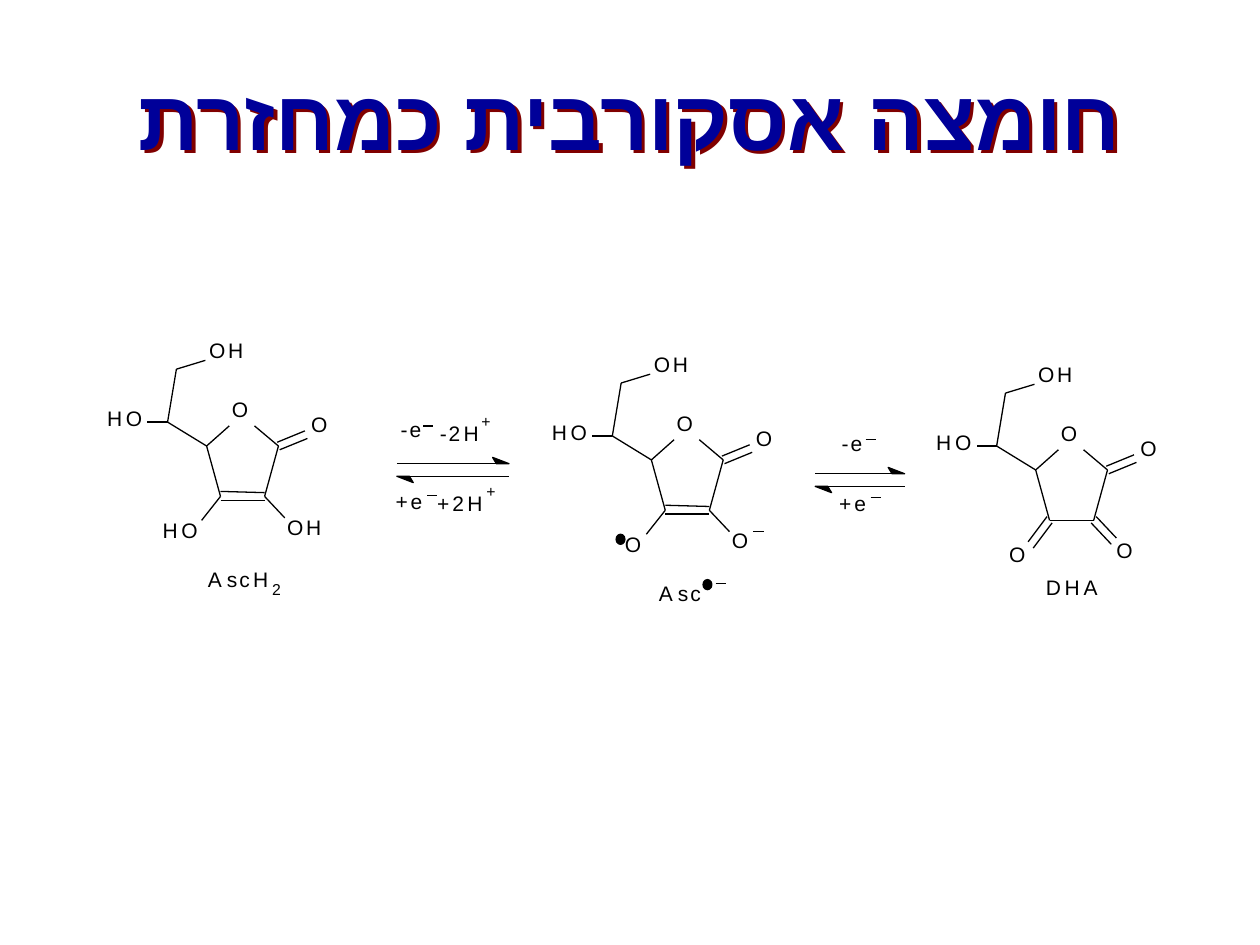
"""Build the slide showing ascorbic acid as a reducing agent."""
from lxml import etree
from pptx import Presentation
from pptx.dml.color import RGBColor as RGB
from pptx.enum.lang import MSO_LANGUAGE_ID as LANG
from pptx.enum.shapes import MSO_CONNECTOR as CONN, MSO_SHAPE as SHAPE
from pptx.enum.text import MSO_ANCHOR as ANCHOR, MSO_AUTO_SIZE as FIT, PP_ALIGN as ALIGN
from pptx.oxml import parse_xml
from pptx.oxml.ns import qn
from pptx.util import Pt

PX = 9144
THEME = {
    "font": "Arial",
    "title": RGB(0x00, 0x00, 0x99),
    "shadow": "800000",
    "ink": RGB(0x00, 0x00, 0x00),
    "title_size": 48,
    "size": 12,
    "script_size": 9,
    "line": 0.75,
}
GLYPHS = {
    "H": (12, 15), "O": (13, 15), "D": (12, 15), "A": (11, 15), "s": (8, 10),
    "c": (8, 11), "e": (9, 12), "2": (9, 12), "+": (10, 12), "-": (5, 7),
}

prs = Presentation()
prs.slide_width, prs.slide_height = 1000 * PX, 750 * PX
s = prs.slides.add_slide(prs.slide_layouts[6])


def add_label(text, x, y, size=THEME["size"]):
    """Set the letters of a chemical label one after another."""
    scale = size / THEME["size"]
    for letter in text:
        width, advance = GLYPHS[letter]
        sp = s.shapes.add_textbox(x * PX, y * PX, round(width * scale) * PX, round(20 * scale) * PX)
        tf = sp.text_frame
        tf.margin_left = tf.margin_right = tf.margin_top = tf.margin_bottom = 0
        tf.word_wrap = False
        tf.auto_size = FIT.SHAPE_TO_FIT_TEXT
        tf.text = letter
        font = tf.paragraphs[0].runs[0].font
        font.name, font.size = THEME["font"], Pt(size)
        font.color.rgb = THEME["ink"]
        x += advance


def add_line(x1, y1, x2, y2):
    """Draw one thin stroke."""
    sp = s.shapes.add_connector(CONN.STRAIGHT, x1 * PX, y1 * PX, x2 * PX, y2 * PX)
    sp.line.color.rgb = THEME["ink"]
    sp.line.width = Pt(THEME["line"])
    etree.SubElement(sp._element.spPr, qn("a:effectLst"))


sp = s.shapes.add_textbox(50 * PX, 30 * PX, 900 * PX, 125 * PX)
sp._element.spPr.append(parse_xml(
    '<a:effectLst xmlns:a="http://schemas.openxmlformats.org/drawingml/2006/main">'
    '<a:outerShdw dist="35921" dir="2700000" algn="ctr" rotWithShape="0">'
    f'<a:srgbClr val="{THEME["shadow"]}"/></a:outerShdw></a:effectLst>'))
tf = sp.text_frame
tf.word_wrap = True
tf.vertical_anchor = ANCHOR.MIDDLE
tf.text = "חומצה אסקורבית כמחזרת"
p = tf.paragraphs[0]
p.alignment = ALIGN.CENTER
p._p.get_or_add_pPr().set("rtl", "1")
r = p.runs[0]
r.font.name, r.font.size, r.font.bold = THEME["font"], Pt(THEME["title_size"]), True
r.font.color.rgb = THEME["title"]
r.font.language_id = LANG.HEBREW
etree.SubElement(r._r.get_or_add_rPr(), qn("a:cs")).set("typeface", THEME["font"])

LACTONE = [
    (133, 335, 140, 293), (133, 335, 117, 335), (140, 293, 163, 286),
    (182, 338, 164, 354), (221, 354, 202, 338), (210, 394, 221, 354),
    (164, 354, 175, 394), (222, 357, 244, 348), (220, 351, 242, 342),
    (133, 335, 164, 354),
]
ENEDIOL = [
    (175, 397, 210, 397), (175, 390, 210, 391),
    (210, 394, 226, 411), (175, 394, 160, 413),
]
DIONE = [
    (175, 394, 210, 394), (208, 396, 224, 413), (212, 391, 228, 408),
    (173, 391, 158, 411), (177, 396, 162, 416),
]
ATOMS = [("HO", 85, 322), ("OH", 166, 268), ("O", 184, 315), ("O", 247, 327)]
HYDROXYLS = [("OH", 228, 408), ("HO", 129, 411)]
OXYGENS = [("O", 228, 408), ("O", 143, 411)]
MOLECULES = [
    (0, 0, ENEDIOL, HYDROXYLS),
    (353, 11, ENEDIOL, OXYGENS),
    (658, 19, DIONE, OXYGENS),
]
for dx, dy, bonds, ends in MOLECULES:
    for x1, y1, x2, y2 in LACTONE + bonds:
        add_line(x1 + dx, y1 + dy, x2 + dx, y2 + dy)
    for text, x, y in ATOMS + ends:
        add_label(text, x + dx, y + dy)

for text, x, y in [
    ("AscH", 165, 450), ("Asc", 523, 461), ("DHA", 830, 456),
    ("-e", 318, 331), ("-2H", 349, 334), ("+e", 314, 388), ("+2H", 347, 389),
    ("-e", 668, 342), ("+e", 666, 389),
]:
    add_label(text, x, y)
for text, x, y in [("2", 216, 460), ("+", 382, 327), ("+", 386, 382)]:
    add_label(text, x, y, THEME["script_size"])

for x, y in [(568, 463), (598, 422), (336, 338), (339, 393), (687, 349), (691, 395)]:
    add_line(x, y, x + 8, y)

radicals = []
for x, y in [(558, 460), (489, 424)]:
    radicals.append(s.shapes.add_shape(SHAPE.OVAL, x * PX, y * PX, 7 * PX, 8 * PX))

barbs = []
for x, y, length in [(315, 368, 89), (647, 376, 71)]:
    for tip, level, way in [(x + length, y, -1), (x, y + 10, 1)]:
        add_line(x, level, x + length, level)
        fb = s.shapes.build_freeform(tip, level, scale=PX)
        fb.add_line_segments([(tip + 10 * way, level), (tip + 13 * way, level + 5 * way)], close=True)
        barbs.append(fb.convert_to_shape())

for sp in radicals + barbs:
    sp.shadow.inherit = False
    sp.fill.solid()
    sp.fill.fore_color.rgb = sp.line.color.rgb = THEME["ink"]
    sp.line.width = Pt(THEME["line"])

prs.save("out.pptx")
